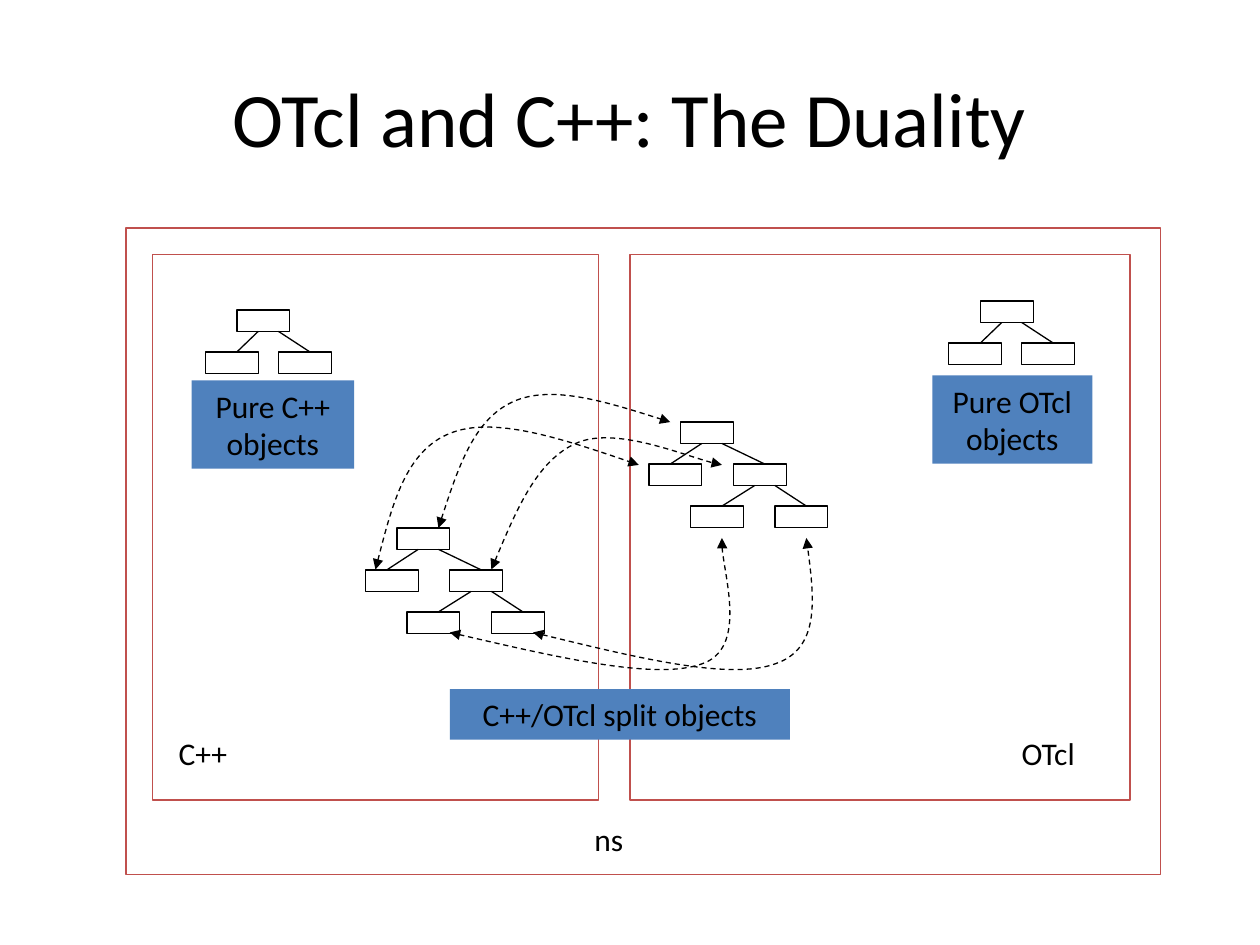
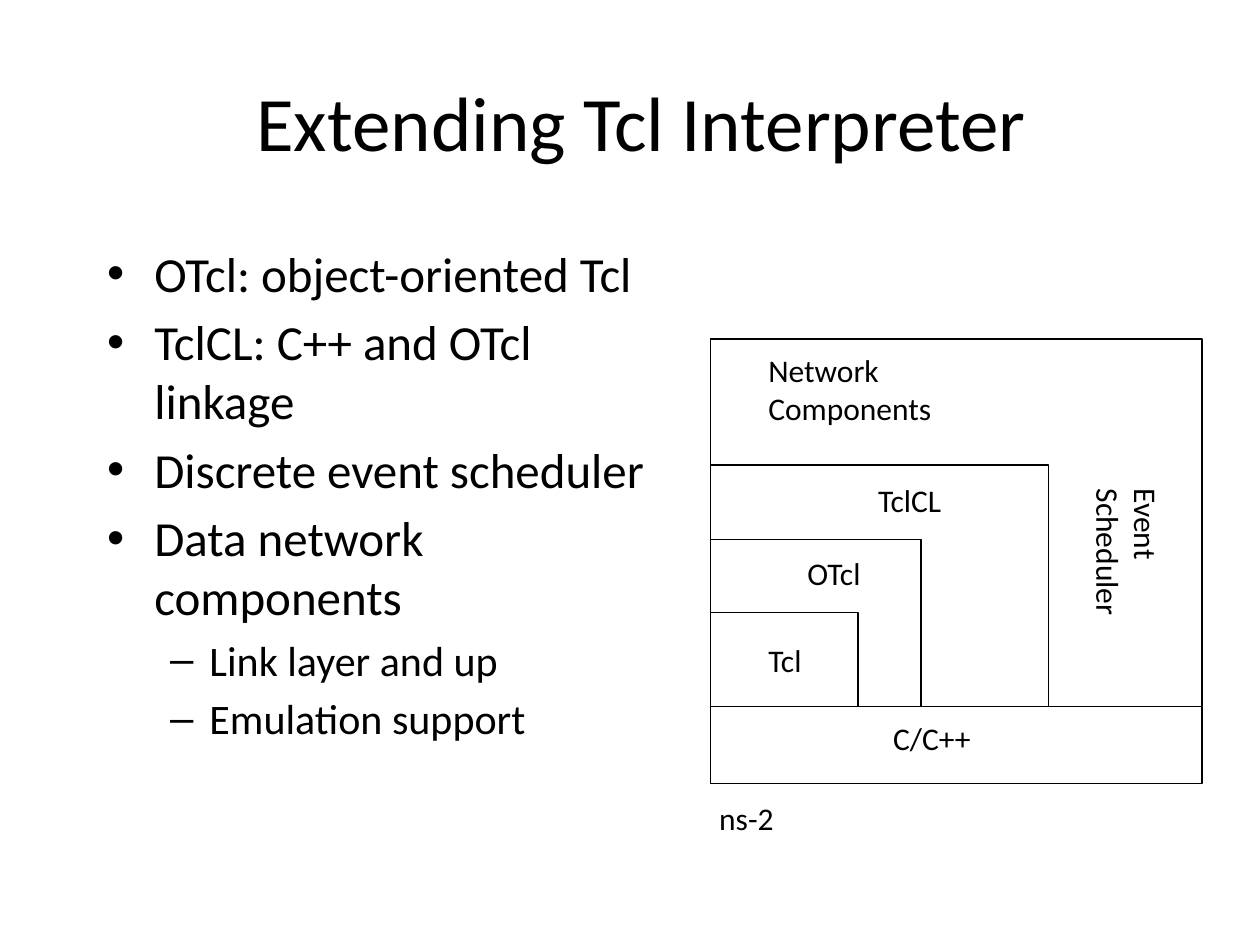
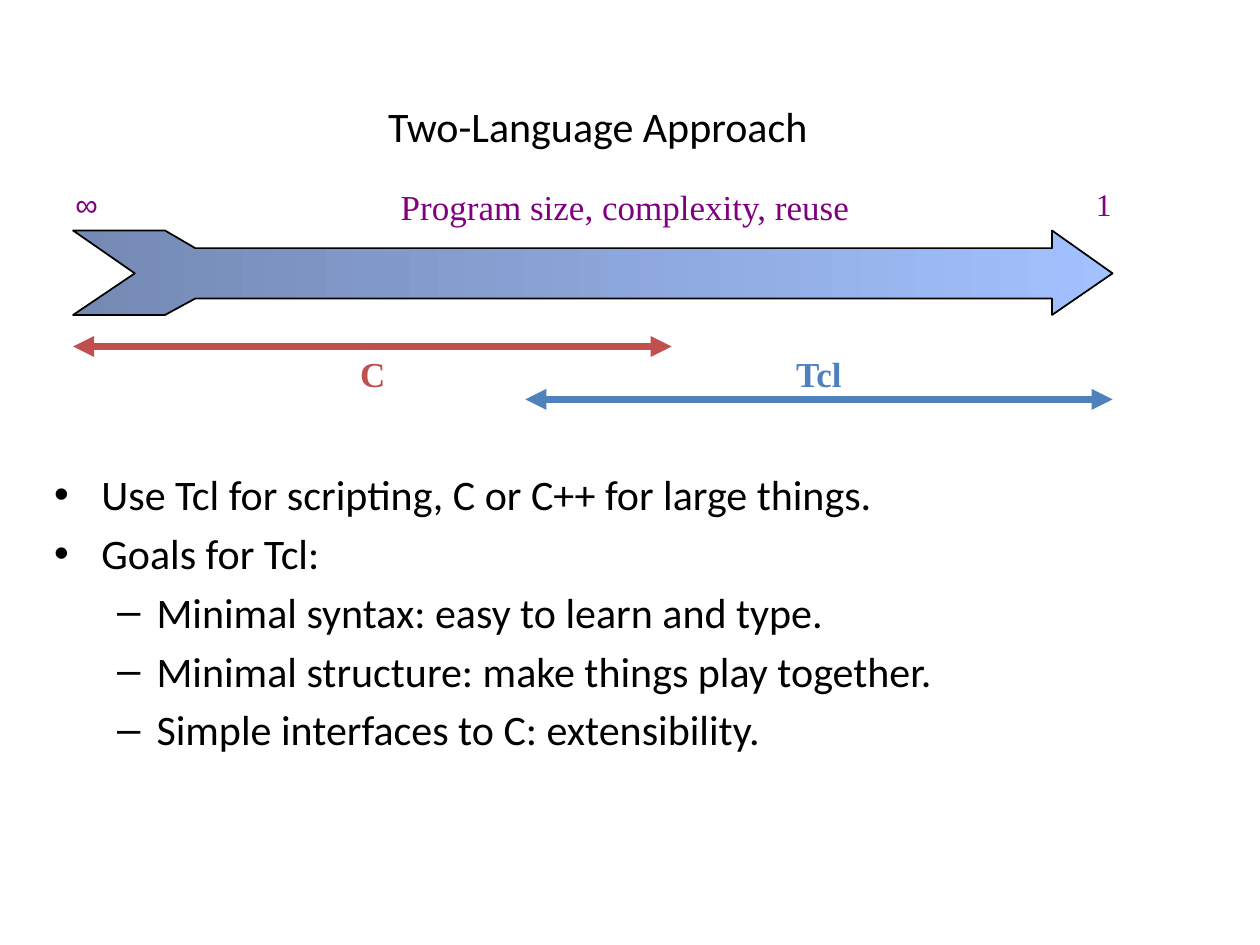
from lxml import etree
from pptx import Presentation
from pptx.dml.color import RGBColor
from pptx.enum.dml import MSO_LINE
from pptx.enum.shapes import MSO_CONNECTOR, MSO_SHAPE
from pptx.enum.text import MSO_ANCHOR, PP_ALIGN
from pptx.oxml.ns import qn
from pptx.util import Inches, Pt

# Shared look
BLACK, RED, BLUE, PURPLE = "000000", "C0504D", "4F81BD", "800080"
GRADIENT = ("7489B4", "A2C1FE")
SANS, SERIF, SYMBOL = "Calibri", "Times New Roman", "Arial"
LEFT, CENTER, RIGHT = PP_ALIGN.LEFT, PP_ALIGN.CENTER, PP_ALIGN.RIGHT
TOP, MIDDLE, BOTTOM = MSO_ANCHOR.TOP, MSO_ANCHOR.MIDDLE, MSO_ANCHOR.BOTTOM
RECTANGLE, STRAIGHT, DASH = MSO_SHAPE.RECTANGLE, MSO_CONNECTOR.STRAIGHT, MSO_LINE.DASH
TITLE_AND_BODY, TITLE_ONLY = 1, 5
THIN = 0.75

# Slide 1: class trees in two languages
DUALITY_TITLE = ("OTcl and C++: The Duality", (0.5, 0.3, 9, 1.25))
DUALITY_FRAMES = [(1.21, 2.02, 3.54, 4.33), (5, 2.02, 3.97, 4.33), (1, 1.81, 8.21, 5.13)]
DUALITY_LABELS = [
    ("C++", (1.32, 5.78, 0.89, 0.5)),
    ("OTcl", (8.01, 5.78, 0.86, 0.5)),
    ("ns", (4.62, 6.46, 0.54, 0.5)),
]
DUALITY_CAPTIONS = [
    ("Pure C++\nobjects", (1.52, 3.02, 1.29, 0.7)),
    ("Pure OTcl\nobjects", (7.4, 2.98, 1.27, 0.7)),
    ("C++/OTcl split objects", (3.57, 5.47, 2.7, 0.4)),
]
NODE_WIDTH, NODE_HEIGHT, ROW_STEP = 0.42, 0.17, 1 / 3
# Each node: offset from the root, row, parent index, where the link enters
PURE_TREE = [(0, 0, None, 0), (-0.25, 1, 0, 0.25), (0.33, 1, 0, 0.25)]
SPLIT_TREE = [
    (0, 0, None, 0), (-0.25, 1, 0, 0.17), (0.42, 1, 0, 0.25),
    (0.08, 2, 2, 0.25), (0.75, 2, 2, 0.25),
]
TREES = [
    (PURE_TREE, 1.88, 2.46), (SPLIT_TREE, 3.15, 4.19),
    (PURE_TREE, 7.78, 2.39), (SPLIT_TREE, 5.4, 3.35),
]
# Start point, then two cubic segments of three points each
TWIN_CURVES = [
    [(3.9, 4.52), (4.08, 4.09), (4.26, 3.66), (4.57, 3.52), (4.87, 3.38), (5.54, 3.66), (5.73, 3.69)],
    [(3.57, 5.02), (4.39, 5.21), (5.21, 5.4), (5.57, 5.27), (5.93, 5.15), (5.71, 4.44), (5.73, 4.27)],
    [(4.23, 5.02), (5.01, 5.21), (5.79, 5.4), (6.15, 5.27), (6.51, 5.15), (6.46, 4.71), (6.4, 4.27)],
    [(2.98, 4.52), (3.1, 4.05), (3.22, 3.58), (3.57, 3.44), (3.91, 3.3), (4.49, 3.49), (5.07, 3.69)],
    [(3.48, 4.19), (3.62, 3.76), (3.76, 3.33), (4.07, 3.19), (4.37, 3.05), (4.85, 3.2), (5.32, 3.35)],
]

# Slide 2: nested layers sharing a left edge and a base line
LAYERS_TITLE = ("Extending Tcl Interpreter", (0.67, 0.33, 8.84, 1.25))
LAYERS_BODY = (0.75, 1.88, 4.69, 5.21)
LAYERS_LIST = [
    (0, "OTcl: object-oriented Tcl"),
    (0, "TclCL: C++ and OTcl linkage"),
    (0, "Discrete event scheduler"),
    (0, "Data network components"),
    (1, "Link layer and up"),
    (1, "Emulation support"),
]
LAYER_LEFT, LAYER_BASE = 5.64, 5.61
LAYER_SIZES = [(1.17, 0.75), (1.67, 1.33), (2.68, 1.92), (3.9, 2.92)]
FOUNDATION = (LAYER_LEFT, LAYER_BASE, 3.9, 0.61)
LAYER_LABELS = [
    ("Tcl", (6, 5.04, 0.7, 0.4), 0),
    ("OTcl", (6.31, 4.35, 0.86, 0.5), 0),
    ("TclCL", (6.87, 3.77, 0.99, 0.5), 0),
    ("ns-2", (5.61, 6.29, 0.84, 0.5), 0),
    ("Event\nScheduler", (8.03, 4.15, 1.64, 0.9), 90),
    ("Network\nComponents", (6, 2.74, 2.03, 0.9), 0),
    ("C/C++", (6.99, 5.66, 1.21, 0.5), 0),
]

# Slide 3: the language range
RANGE_TITLE = ("Two-Language Approach", (0.58, 0.04, 8.33, 1.21))
RANGE_BODY = (0.33, 3.67, 8.42, 2.75)
RANGE_LIST = [
    (0, "Use Tcl for scripting, C or C++ for large things."),
    (0, "Goals for Tcl:"),
    (1, "Minimal syntax: easy to learn and type."),
    (1, "Minimal structure: make things play together."),
    (1, "Simple interfaces to C: extensibility."),
]
BIG_ARROW = [
    (0.58, 1.83), (1.31, 1.83), (1.55, 1.97), (8.35, 1.97), (8.35, 1.83), (8.83, 2.17),
    (8.35, 2.5), (8.35, 2.37), (1.55, 2.37), (1.31, 2.5), (0.58, 2.5), (1.07, 2.17),
]
# Text, box, size, font, colour, alignment, bold
RANGE_LABELS = [
    ("Program size, complexity, reuse", (2.87, 1.42, 4.18, 0.43), 20, SERIF, PURPLE, CENTER, False),
    ("1", (7.91, 1.42, 1.01, 0.4), 18, SERIF, PURPLE, RIGHT, False),
    ("∞", (0.5, 1.42, 1.01, 0.4), 18, SYMBOL, PURPLE, LEFT, False),
    ("C", (0.58, 2.75, 4.76, 0.43), 20, SERIF, RED, CENTER, True),
    ("Tcl", (4.16, 2.75, 4.68, 0.43), 20, SERIF, BLUE, CENTER, True),
]
LANGUAGE_SPANS = [(0.58, 5.33, 2.75, RED), (4.17, 8.83, 3.17, BLUE)]


def color(value):
    return RGBColor.from_string(value)


def inches(values):
    return [Inches(value) for value in values]


def style_line(line, line_color, width=THIN):
    line.color.rgb = color(line_color)
    line.width = Pt(width)


def add_arrowheads(line):
    for end in ("a:headEnd", "a:tailEnd"):
        etree.SubElement(line._get_or_add_ln(), qn(end), type="triangle")


def style_text(paragraph, size, font=SANS, text_color=BLACK, align=LEFT, bold=False):
    paragraph.alignment = align
    paragraph.font.size = Pt(size)
    paragraph.font.name = font
    paragraph.font.bold = bold
    paragraph.font.color.rgb = color(text_color)


def fill_text(shape, text, size=18, *style):
    frame = shape.text_frame
    frame.word_wrap = True
    frame.text = text
    for paragraph in frame.paragraphs:
        style_text(paragraph, size, *style)


def add_label(slide, text, box, *style):
    label = slide.shapes.add_textbox(*inches(box))
    fill_text(label, text, *style)
    return label


def add_frame(slide, box, line_color=BLACK):
    frame = slide.shapes.add_shape(RECTANGLE, *inches(box))
    frame.shadow.inherit = False
    frame.fill.background()
    style_line(frame.line, line_color)


def add_line(slide, start, end, line_color=BLACK, width=THIN):
    connector = slide.shapes.add_connector(STRAIGHT, *inches((*start, *end)))
    style_line(connector.line, line_color, width)
    etree.SubElement(connector._element.spPr, qn("a:effectLst"))
    return connector


def add_outline(slide, points, closed):
    corners = [inches(point) for point in points]
    builder = slide.shapes.build_freeform(*corners[0])
    builder.add_line_segments(corners[1:], close=closed)
    outline = builder.convert_to_shape()
    outline.shadow.inherit = False
    return outline


def add_curve(slide, points):
    curve = add_outline(slide, points, closed=False)
    curve.fill.background()
    style_line(curve.line, BLACK)
    curve.line.dash_style = DASH
    add_arrowheads(curve.line)
    # Merge each three line segments into one cubic segment
    segments = list(curve._element.iter(qn("a:lnTo")))
    for index in range(0, len(segments), 3):
        first, *others = segments[index:index + 3]
        first.tag = qn("a:cubicBezTo")
        for segment in others:
            first.append(segment[0])
            segment.getparent().remove(segment)


def add_tree(slide, tree, root_left, root_top):
    for offset, row, parent, entry in tree:
        left, top = root_left + offset, root_top + row * ROW_STEP
        add_frame(slide, (left, top, NODE_WIDTH, NODE_HEIGHT))
        if parent is not None:
            parent_offset, parent_row = tree[parent][:2]
            leave = 0.17 if offset < parent_offset else 0.33
            start = (root_left + parent_offset + leave,
                     root_top + parent_row * ROW_STEP + NODE_HEIGHT)
            add_line(slide, start, (left + entry, top))


def place(shape, box):
    shape.left, shape.top, shape.width, shape.height = inches(box)


def add_slide(presentation, layout, title, size=44, anchor=MIDDLE):
    slide = presentation.slides.add_slide(presentation.slide_layouts[layout])
    text, box = title
    place(slide.shapes.title, box)
    fill_text(slide.shapes.title, text, size, SANS, BLACK, CENTER)
    slide.shapes.title.text_frame.vertical_anchor = anchor
    return slide


def fill_body(slide, box, items, sizes):
    body = slide.placeholders[1]
    place(body, box)
    body.text_frame.text = "\n".join(text for _, text in items)
    for paragraph, (level, _) in zip(body.text_frame.paragraphs, items):
        paragraph.level = level
        style_text(paragraph, sizes[level])


def build_duality(presentation):
    slide = add_slide(presentation, TITLE_ONLY, DUALITY_TITLE)
    for box in DUALITY_FRAMES:
        add_frame(slide, box, RED)
    for tree in TREES:
        add_tree(slide, *tree)
    for text, box in DUALITY_LABELS:
        add_label(slide, text, box)
    for points in TWIN_CURVES:
        add_curve(slide, points)
    for text, box in DUALITY_CAPTIONS:
        caption = slide.shapes.add_shape(RECTANGLE, *inches(box))
        caption.shadow.inherit = False
        caption.fill.solid()
        caption.fill.fore_color.rgb = color(BLUE)
        caption.line.fill.background()
        fill_text(caption, text, 18, SANS, BLACK, CENTER)
        caption.text_frame.vertical_anchor = TOP


def build_layers(presentation):
    slide = add_slide(presentation, TITLE_AND_BODY, LAYERS_TITLE)
    fill_body(slide, LAYERS_BODY, LAYERS_LIST, (28, 24))
    for width, height in LAYER_SIZES:
        add_frame(slide, (LAYER_LEFT, LAYER_BASE - height, width, height))
    add_frame(slide, FOUNDATION)
    for text, box, rotation in LAYER_LABELS:
        add_label(slide, text, box).rotation = rotation


def build_range(presentation):
    slide = add_slide(presentation, TITLE_AND_BODY, RANGE_TITLE, 24, BOTTOM)
    fill_body(slide, RANGE_BODY, RANGE_LIST, (24, 24))
    arrow = add_outline(slide, BIG_ARROW, closed=True)
    arrow.fill.gradient()
    arrow.fill.gradient_angle = 0
    for stop, stop_color in zip(arrow.fill.gradient_stops, GRADIENT):
        stop.color.rgb = color(stop_color)
    style_line(arrow.line, BLACK, 1)
    for left, right, top, span_color in LANGUAGE_SPANS:
        span = add_line(slide, (left, top), (right, top), span_color, 4)
        add_arrowheads(span.line)
    for label in RANGE_LABELS:
        add_label(slide, *label)


def main():
    presentation = Presentation()
    presentation.slide_width, presentation.slide_height = Inches(10), Inches(7.5)
    build_duality(presentation)
    build_layers(presentation)
    build_range(presentation)
    presentation.save("out.pptx")


if __name__ == "__main__":
    main()
